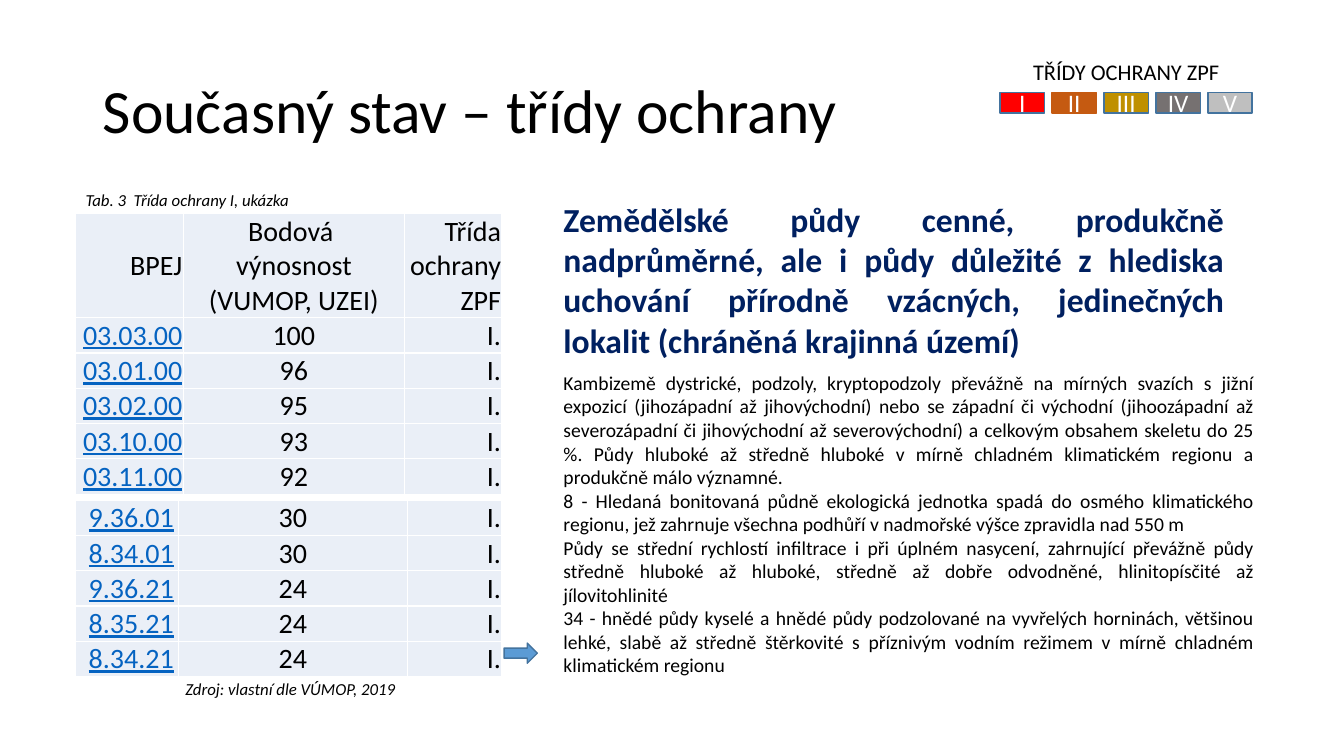
from lxml import etree
from pptx import Presentation
from pptx.dml.color import RGBColor
from pptx.enum.shapes import MSO_SHAPE
from pptx.enum.text import MSO_ANCHOR, MSO_AUTO_SIZE, PP_ALIGN
from pptx.oxml.ns import qn
from pptx.util import Inches, Pt

LEFT, CENTER, RIGHT, JUSTIFY = PP_ALIGN.LEFT, PP_ALIGN.CENTER, PP_ALIGN.RIGHT, PP_ALIGN.JUSTIFY
MIDDLE = MSO_ANCHOR.MIDDLE
GROW, FIXED = MSO_AUTO_SIZE.SHAPE_TO_FIT_TEXT, MSO_AUTO_SIZE.NONE
RECTANGLE, RIGHT_ARROW = MSO_SHAPE.RECTANGLE, MSO_SHAPE.RIGHT_ARROW
TITLE_ONLY = 5

FONT = "Calibri"
BLACK, WHITE, NAVY, LINK = "000000", "FFFFFF", "002060", "0563C1"
CELL_FILL, ARROW_FILL, OUTLINE = "EAEFF7", "5B9BD5", "43739E"

HEADER = ("BPEJ", "Bodová \nvýnosnost (VUMOP, UZEI)", "Třída ochrany ZPF")
BEST_SOILS = [("03.03.00", "100"), ("03.01.00", "96"), ("03.02.00", "95"),
              ("03.10.00", "93"), ("03.11.00", "92")]
POOR_SOILS = [("9.36.01", "30"), ("8.34.01", "30"), ("9.36.21", "24"),
              ("8.35.21", "24"), ("8.34.21", "24")]
CLASSES = [("I", "FF0000", OUTLINE), ("II", "C55A11", "C55A11"), ("III", "BF9000", OUTLINE),
           ("IV", "767171", OUTLINE), ("V", "BFBFBF", OUTLINE)]
SUMMARY = ("Zemědělské půdy cenné, produkčně nadprůměrné, ale i půdy důležité z hlediska "
           "uchování přírodně vzácných, jedinečných lokalit (chráněná krajinná území)")
DETAILS = "\n".join([
    "Kambizemě dystrické, podzoly, kryptopodzoly převážně na mírných svazích s jižní expozicí "
    "(jihozápadní až jihovýchodní) nebo se západní či východní (jihoozápadní až severozápadní "
    "či jihovýchodní až severovýchodní) a celkovým obsahem skeletu do 25 %. Půdy hluboké až "
    "středně hluboké v mírně chladném klimatickém regionu a produkčně málo významné.",
    "8 - Hledaná bonitovaná půdně ekologická jednotka spadá do osmého klimatického regionu, "
    "jež zahrnuje všechna podhůří v nadmořské výšce zpravidla nad 550 m",
    "Půdy se střední rychlostí infiltrace i při úplném nasycení, zahrnující převážně půdy "
    "středně hluboké až hluboké, středně až dobře odvodněné, hlinitopísčité až jílovitohlinité",
    "34 - hnědé půdy kyselé a hnědé půdy podzolované na vyvřelých horninách, většinou lehké, "
    "slabě až středně štěrkovité s příznivým vodním režimem v mírně chladném klimatickém regionu",
])


def color(hex_code):
    return RGBColor.from_string(hex_code)


def write(frame, text, size=20, ink=BLACK, align=LEFT, spacing=None, **font_style):
    frame.text = text
    for paragraph in frame.paragraphs:
        paragraph.alignment = align
        paragraph.line_spacing = spacing
        for run in paragraph.runs:
            run.font.name = FONT
            run.font.size = Pt(size)
            run.font.color.rgb = color(ink)
            for attribute, value in font_style.items():
                setattr(run.font, attribute, value)


class SoilSlide:
    """Draws the elements of one slide in a shared style."""

    def __init__(self, deck):
        self.slide = deck.slides.add_slide(deck.slide_layouts[TITLE_ONLY])
        self.shapes = self.slide.shapes

    def title(self, text, left, top, width, height):
        heading = self.shapes.title
        heading.left, heading.top = Inches(left), Inches(top)
        heading.width, heading.height = Inches(width), Inches(height)
        frame = heading.text_frame
        frame.vertical_anchor = MIDDLE
        frame.auto_size = FIXED
        write(frame, text, size=44, spacing=0.9)

    def text(self, text, left, top, width, height, within=None, **style):
        box = (within or self.shapes).add_textbox(
            Inches(left), Inches(top), Inches(width), Inches(height))
        box.text_frame.word_wrap = True
        box.text_frame.auto_size = GROW
        write(box.text_frame, text, **style)

    def shape(self, kind, left, top, width, height, fill, line, label="", within=None):
        shape = (within or self.shapes).add_shape(
            kind, Inches(left), Inches(top), Inches(width), Inches(height))
        shape.shadow.inherit = False
        shape.fill.solid()
        shape.fill.fore_color.rgb = color(fill)
        shape.line.color.rgb = color(line)
        shape.line.width = Pt(1)
        if label:
            shape.text_frame.vertical_anchor = MIDDLE
            write(shape.text_frame, label, size=18, ink=WHITE, align=CENTER)

    def legend(self, heading, left, top, step):
        group = self.shapes.add_group_shape().shapes
        for index, (name, fill, line) in enumerate(CLASSES):
            self.shape(RECTANGLE, left + index * step, top, 0.44, 0.2, fill, line, name, group)
        self.text(heading, left, 0.53, 2.5, 0.37, group, size=16, align=CENTER)

    def soil_table(self, rows, left, top, widths, heights, code_align, code_indent=0.01):
        table = self.shapes.add_table(
            len(rows), len(widths), Inches(left), Inches(top),
            Inches(sum(widths)), Inches(sum(heights))).table
        table.first_row = table.horz_banding = False
        for column, width in zip(table.columns, widths):
            column.width = Inches(width)
        for row, height in zip(table.rows, heights):
            row.height = Inches(height)
        for r, row in enumerate(rows):
            for c, (text, align) in enumerate(zip(row, (code_align, CENTER, RIGHT))):
                is_link = c == 0 and row is not HEADER
                self.cell(table.cell(r, c), text, code_indent if c == 0 else 0.01,
                          align=align, ink=LINK if is_link else BLACK, underline=is_link)

    def cell(self, cell, text, indent, **style):
        cell.margin_left = Inches(indent)
        cell.margin_right = cell.margin_top = Inches(0.01)
        cell.margin_bottom = 0
        cell.vertical_anchor = MIDDLE
        cell.fill.solid()
        cell.fill.fore_color.rgb = color(CELL_FILL)
        properties = cell._tc.get_or_add_tcPr()
        for position, side in enumerate(("a:lnL", "a:lnR", "a:lnT", "a:lnB")):
            border = etree.Element(qn(side), w=str(Pt(1)))
            solid = etree.SubElement(border, qn("a:solidFill"))
            etree.SubElement(solid, qn("a:srgbClr"), val=WHITE)
            properties.insert(position, border)
        write(cell.text_frame, text, **style)


def main():
    deck = Presentation()
    deck.slide_width, deck.slide_height = Inches(13.33), Inches(7.5)
    page = SoilSlide(deck)
    page.title("Současný stav – třídy ochrany", 0.92, 0.4, 11.5, 1.45)

    best_rows = [HEADER] + [(*soil, "I.") for soil in BEST_SOILS]
    poor_rows = [(*soil, "I.") for soil in POOR_SOILS]
    page.soil_table(best_rows, 0.75, 2.12, (1.07, 2.19, 0.97), [1.03] + [0.34] * 5, RIGHT)
    page.soil_table(poor_rows, 0.75, 4.96, (1.02, 2.27, 0.94), [0.34] * 5, LEFT, 0.13)

    page.text(DETAILS, 5.49, 3.63, 7.05, 3.16, size=14, align=JUSTIFY)
    page.text(SUMMARY, 5.49, 1.92, 6.75, 1.72, size=24, ink=NAVY, align=JUSTIFY, bold=True)
    page.shape(RIGHT_ARROW, 5, 6.38, 0.33, 0.2, ARROW_FILL, OUTLINE)
    page.text("Zdroj: vlastní dle VÚMOP, 2019", 0.75, 6.68, 4.26, 0.3,
              size=12, align=CENTER, italic=True)
    page.legend("TŘÍDY OCHRANY ZPF", 9.92, 0.92, 0.515)
    page.text("Tab. 3  Třída ochrany I, ukázka", 0.75, 1.83, 2.62, 0.3, size=12, italic=True)
    deck.save("out.pptx")


if __name__ == "__main__":
    main()
